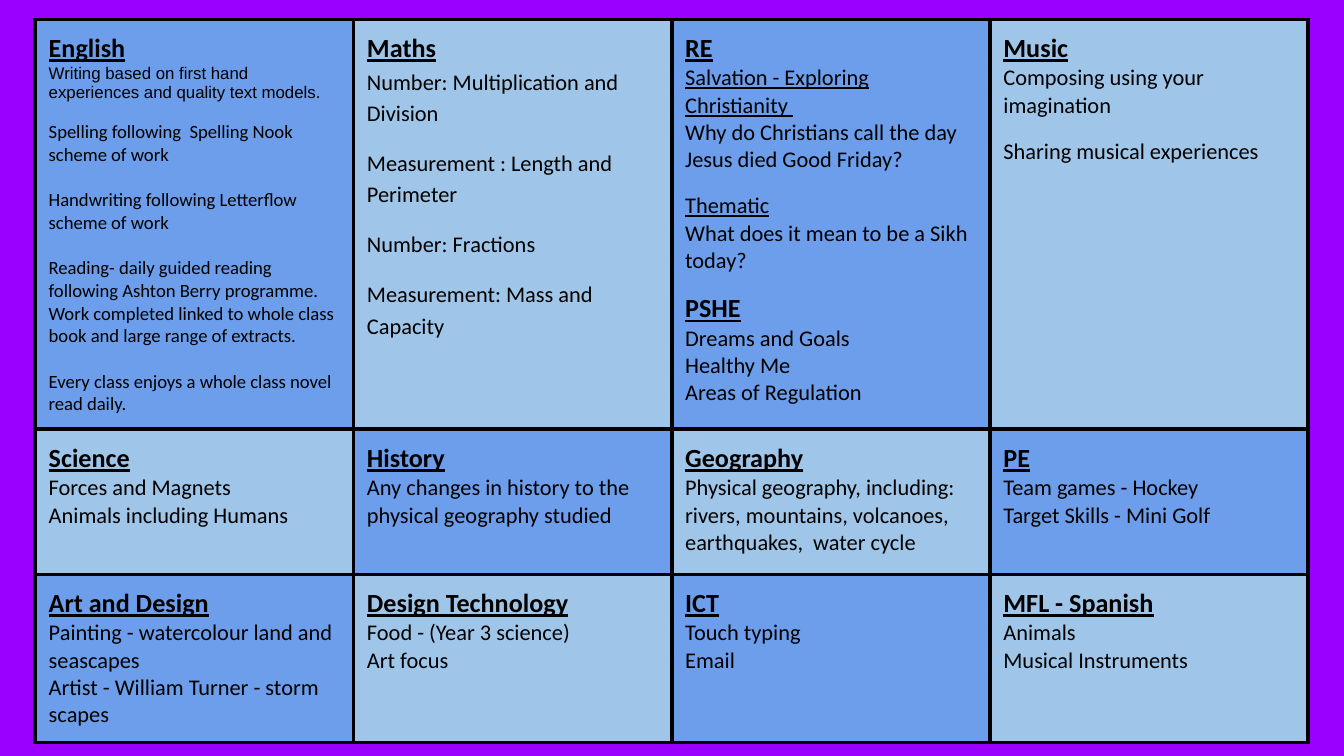
import pptx
import pptx.util
import pptx.dml.color
import pptx.oxml
import pptx.oxml.ns

Pt = pptx.util.Pt
HUES = {"page": "9900FF", "dark": "6D9EEB", "light": "9FC5E8", "ink": "000000"}
HEAD = {"size": 14, "bold": True, "line": True}
LINK = {"line": True}
GAP = {"gap": 10}
WIDE = {"lead": 1.15}
LOOSE = {**WIDE, **GAP}
NOTE = {"size": 10, "gap": 12.2}

GRID = [
    [
        [("English", HEAD),
         ("Writing based on first hand experiences and quality text models.",
          {"size": 9, "font": "Arial"}),
         ("Spelling following  Spelling Nook scheme of work", {**NOTE, **GAP}),
         ("Handwriting following Letterflow scheme of work", NOTE),
         ("Reading- daily guided reading following Ashton Berry programme. "
          "Work completed linked to whole class book and large range of extracts.", NOTE),
         ("Every class enjoys a whole class novel read daily.", NOTE)],
        [("Maths", HEAD),
         ("Number: Multiplication and Division", WIDE),
         ("Measurement : Length and Perimeter", LOOSE),
         ("Number: Fractions", LOOSE),
         ("Measurement: Mass and Capacity", {**LOOSE, "after": 10})],
        [("RE", HEAD),
         ("Salvation - Exploring Christianity ", LINK),
         ("Why do Christians call the day Jesus died Good Friday?", {}),
         ("Thematic", {**LINK, **GAP}),
         ("What does it mean to be a Sikh today?", {}),
         ("PSHE", {**HEAD, **GAP}),
         ("Dreams and Goals", {}),
         ("Healthy Me", {}),
         ("Areas of Regulation", {})],
        [("Music", HEAD),
         ("Composing using your imagination", {}),
         ("Sharing musical experiences", GAP)],
    ],
    [
        [("Science", HEAD), ("Forces and Magnets", {}), ("Animals including Humans", {})],
        [("History", HEAD),
         ("Any changes in history to the physical geography studied", {})],
        [("Geography", HEAD),
         ("Physical geography, including: rivers, mountains, volcanoes, "
          "earthquakes,  water cycle", {})],
        [("PE", HEAD), ("Team games - Hockey", {}), ("Target Skills - Mini Golf", {})],
    ],
    [
        [("Art and Design", HEAD),
         ("Painting - watercolour land and seascapes", {}),
         ("Artist - William Turner - storm scapes", {})],
        [("Design Technology", HEAD), ("Food - (Year 3 science)", {}), ("Art focus", {})],
        [("ICT", HEAD), ("Touch typing", {}), ("Email", {})],
        [("MFL - Spanish", HEAD), ("Animals", {}), ("Musical Instruments", {})],
    ],
]


class Deck:
    """Holds the style and the current slide of the curriculum grid."""

    def __init__(self, wide, high):
        self.show = pptx.Presentation()
        self.show.slide_width, self.show.slide_height = Pt(wide), Pt(high)
        self.slide = self.show.slides.add_slide(self.show.slide_layouts[6])
        self.paint(self.slide.background.fill, "page")

    def paint(self, fill, hue):
        fill.solid()
        fill.fore_color.rgb = pptx.dml.color.RGBColor.from_string(HUES[hue])

    def text(self, para, words, size=12, font="Calibri", bold=False, line=False,
             gap=0, after=0, lead=1.0):
        para.space_before, para.space_after = Pt(gap), Pt(after)
        para.line_spacing = lead
        run = para.add_run()
        run.text = words
        run.font.size, run.font.name = Pt(size), font
        run.font.bold, run.font.underline = bold, line
        self.paint(run.font.fill, "ink")

    def edge(self, cell, width=2.25):
        props = cell._tc.get_or_add_tcPr()
        for spot, side in enumerate(("lnL", "lnR", "lnT", "lnB")):
            props.insert(spot, pptx.oxml.parse_xml(
                f'<a:{side} {pptx.oxml.ns.nsdecls("a")} w="{Pt(width)}"><a:solidFill>'
                f'<a:srgbClr val="{HUES["ink"]}"/></a:solidFill></a:{side}>'))

    def cell(self, cell, lines, hue):
        cell.margin_left = cell.margin_right = Pt(7.2)
        cell.margin_top = cell.margin_bottom = Pt(7.2)
        self.paint(cell.fill, hue)
        self.edge(cell)
        frame = cell.text_frame
        for spot, (words, style) in enumerate(lines):
            para = frame.add_paragraph() if spot else frame.paragraphs[0]
            self.text(para, words, **style)

    def table(self, left, top, wide, highs, grid):
        cols = len(grid[0])
        table = self.slide.shapes.add_table(
            len(grid), cols, Pt(left), Pt(top), Pt(wide * cols), Pt(sum(highs))).table
        for col in table.columns:
            col.width = Pt(wide)
        for row, high in zip(table.rows, highs):
            row.height = Pt(high)
        for down, row in enumerate(grid):
            for over, lines in enumerate(row):
                hue = "light" if (down + over) % 2 else "dark"
                self.cell(table.cell(down, over), lines, hue)


def main():
    deck = Deck(720, 405)
    deck.table(18.9, 10.4, 170.5, (218.6, 77.8, 89.8), GRID)
    deck.show.save("out.pptx")


if __name__ == "__main__":
    main()
